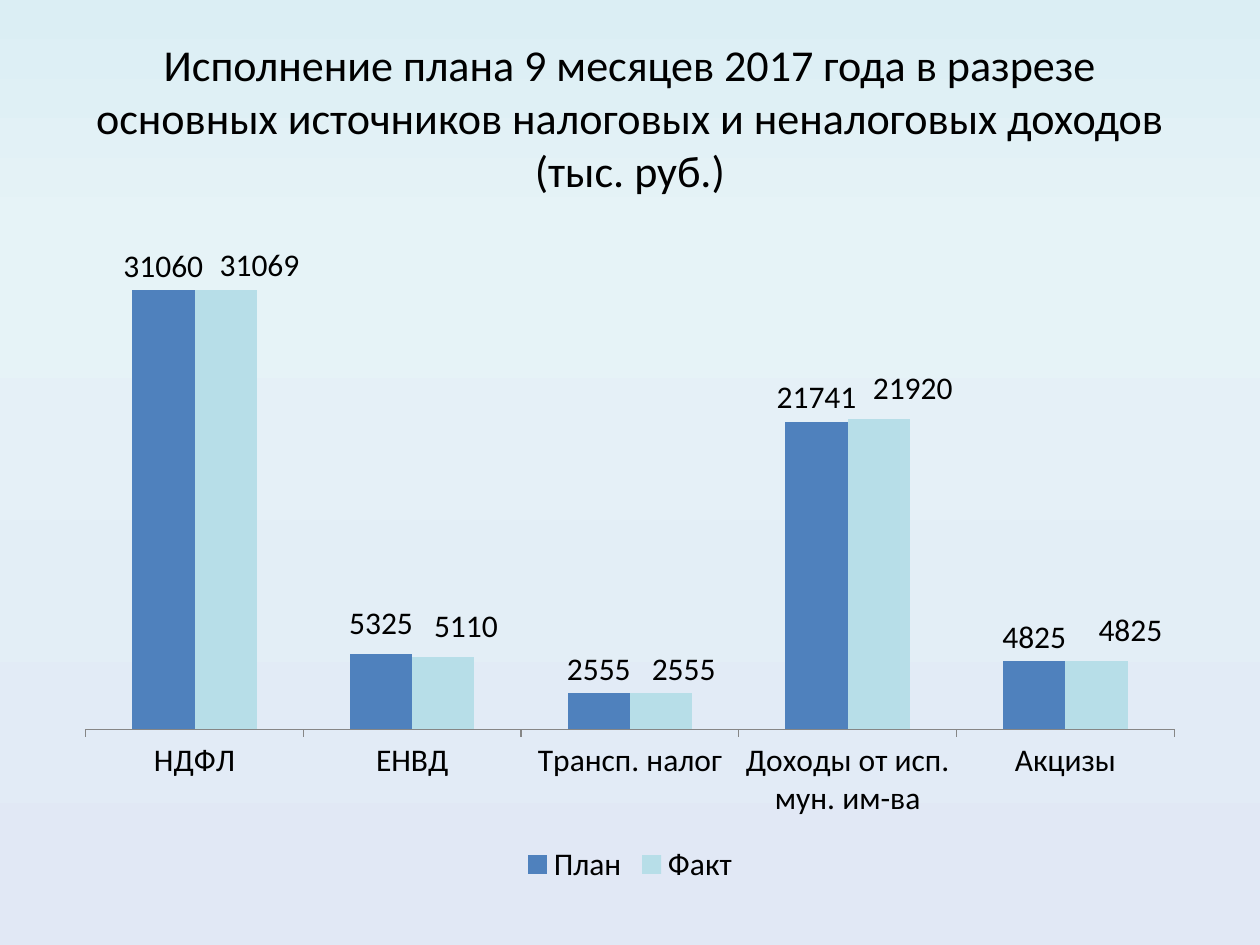
import dataclasses
import typing

import pptx
import pptx.chart.data
import pptx.dml.color
import pptx.enum.chart
import pptx.enum.text
import pptx.oxml
import pptx.oxml.ns
import pptx.util

Cm = pptx.util.Cm
Pt = pptx.util.Pt
RGB = pptx.dml.color.RGBColor

BLACK = RGB(0x00, 0x00, 0x00)
GREY = RGB(0x86, 0x86, 0x86)
BLUE = RGB(0x4F, 0x81, 0xBD)
AQUA = RGB(0xB7, 0xDE, 0xE8)
SKY = RGB(0xDB, 0xEE, 0xF4)
MIST = RGB(0xE6, 0xF3, 0xF7)
LILAC = RGB(0xE1, 0xE8, 0xF5)

FACE = "Calibri"
TITLE = (
    "Исполнение плана 9 месяцев 2017 года в разрезе основных источников "
    "налоговых и неналоговых доходов (тыс. руб.)"
)
TAXES = ["НДФЛ", "ЕНВД", "Трансп. налог", "Доходы от исп. мун. им-ва", "Акцизы"]


@dataclasses.dataclass
class Series:
    name: str
    color: RGB
    sums: list[int]
    shifts: dict[int, tuple[float, float]]


ROWS = [
    Series("План", BLUE, [31060, 5325, 2555, 21741, 4825], {1: (0, -0.01)}),
    Series(
        "Факт",
        AQUA,
        [31069, 5110, 2555, 21920, 4825],
        {0: (0.03, 0), 1: (0.02, -0.01), 2: (0.02, 0), 3: (0.03, -0.01), 4: (0.03, -0.01)},
    ),
]


def style(font: typing.Any, size: float) -> None:
    font.name = FACE
    font.size = Pt(size)
    font.color.rgb = BLACK


def layout(parts: dict[str, typing.Any]) -> typing.Any:
    tags = "".join(f'<c:{key} val="{val}"/>' for key, val in parts.items())
    space = pptx.oxml.ns.nsdecls("c")
    return pptx.oxml.parse_xml(
        f"<c:layout {space}><c:manualLayout>{tags}</c:manualLayout></c:layout>"
    )


def paint_back(slide: typing.Any) -> None:
    fill = slide.background.fill
    fill.gradient()
    fill.gradient_angle = 270
    stops = "".join(
        f'<a:gs pos="{pos * 1000}"><a:srgbClr val="{color}"/></a:gs>'
        for pos, color in ((0, SKY), (25, MIST), (100, LILAC))
    )
    space = pptx.oxml.ns.nsdecls("a")
    old = slide.background._cSld.xpath(".//a:gsLst")[0]
    old.getparent().replace(
        old, pptx.oxml.parse_xml(f"<a:gsLst {space}>{stops}</a:gsLst>")
    )


def add_title(slide: typing.Any) -> None:
    title = slide.shapes.title
    title.left, title.top = Cm(1.27), Cm(0.76)
    title.width, title.height = Cm(22.86), Cm(3.18)
    frame = title.text_frame
    frame.text = TITLE
    frame.word_wrap = True
    frame.auto_size = pptx.enum.text.MSO_AUTO_SIZE.NONE
    frame.vertical_anchor = pptx.enum.text.MSO_ANCHOR.MIDDLE
    para = frame.paragraphs[0]
    para.alignment = pptx.enum.text.PP_ALIGN.CENTER
    style(para.runs[0].font, 25.2)


def format_bars(bars: typing.Any, row: Series) -> None:
    end = pptx.enum.chart.XL_LABEL_POSITION.OUTSIDE_END
    bars.format.fill.solid()
    bars.format.fill.fore_color.rgb = row.color
    bars.invert_if_negative = False
    bars.data_labels.show_value = True
    bars.data_labels.position = end
    style(bars.data_labels.font, 18)
    for index, (x, y) in row.shifts.items():
        label = bars.points[index].data_label
        label.position = end
        style(label.font, 18)
        node = bars._element.xpath(f"./c:dLbls/c:dLbl[c:idx/@val='{index}']")[0]
        node.insert(1, layout({"x": x, "y": y}))


def add_bars(slide: typing.Any) -> None:
    data = pptx.chart.data.CategoryChartData(number_format="General")
    data.categories = TAXES
    for row in ROWS:
        data.add_series(row.name, row.sums)
    chart = slide.shapes.add_chart(
        pptx.enum.chart.XL_CHART_TYPE.COLUMN_CLUSTERED,
        Cm(1.27), Cm(4.45), Cm(22.86), Cm(13.49), data,
    ).chart
    style(chart.font, 18)
    chart.has_title = False
    chart.has_legend = True
    chart.legend.position = pptx.enum.chart.XL_LEGEND_POSITION.BOTTOM
    chart.legend.include_in_layout = False
    style(chart.legend.font, 18)

    axis = chart.category_axis
    axis.major_tick_mark = pptx.enum.chart.XL_TICK_MARK.OUTSIDE
    axis.format.line.color.rgb = GREY
    axis.format.line.width = Pt(0.75)
    style(axis.tick_labels.font, 18)
    scale = chart.value_axis
    scale.visible = False
    scale.has_major_gridlines = False
    scale.minimum_scale = 0
    scale.maximum_scale = 35000

    plot = chart.plots[0]
    plot.gap_width = 150
    plot.overlap = 0
    plot.vary_by_categories = False
    for bars, row in zip(plot.series, ROWS):
        format_bars(bars, row)

    area = chart._chartSpace.xpath("./c:chart/c:plotArea")[0]
    for old in area.xpath("./c:layout"):
        area.remove(old)
    area.insert(0, layout({
        "layoutTarget": "inner", "xMode": "edge", "yMode": "edge",
        "x": 0.02, "y": 0.02, "w": 0.96, "h": 0.74,
    }))


def main() -> None:
    deck = pptx.Presentation()
    deck.slide_width, deck.slide_height = Cm(25.4), Cm(19.05)
    slide = deck.slides.add_slide(deck.slide_layouts[5])
    paint_back(slide)
    add_title(slide)
    add_bars(slide)
    deck.save("out.pptx")


if __name__ == "__main__":
    main()
